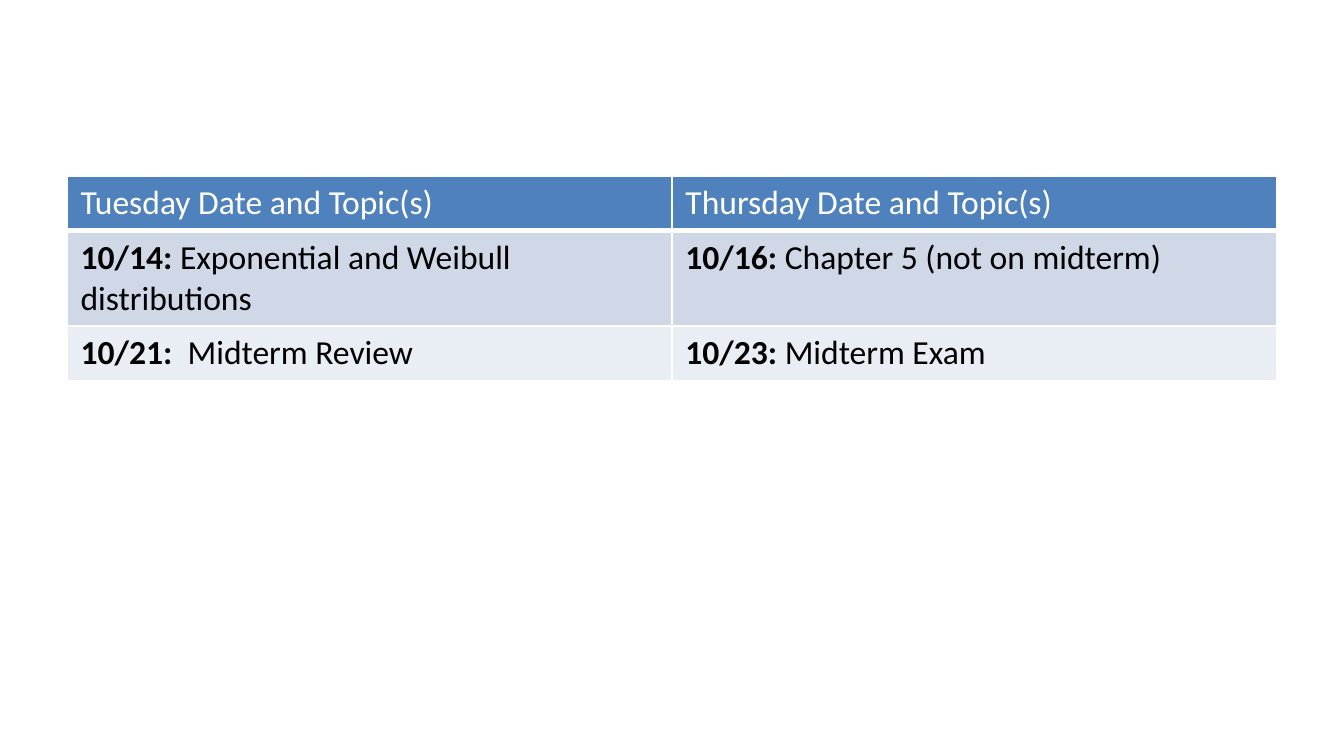
import pptx
import pptx.util
import pptx.oxml
import pptx.dml.color
from pptx.util import Inches

RGB = pptx.dml.color.RGBColor
WHITE = RGB(0xFF, 0xFF, 0xFF)
BLACK = RGB(0, 0, 0)
BLUE = RGB(0x4F, 0x81, 0xBD)
BANDS = [RGB(0xD0, 0xD8, 0xE8), RGB(0xE9, 0xED, 0xF4)]
FONT = "Calibri"

HEADS = ["Tuesday Date and Topic(s)", "Thursday Date and Topic(s)"]
WEEKS = [
    [("10/14:", " Exponential and Weibull distributions"),
     ("10/16:", " Chapter 5 (not on midterm)")],
    [("10/21: ", " Midterm Review"), ("10/23:", " Midterm Exam")],
]
LEFT, TOP, WIDTH = 0.5, 1.31, 9
HEIGHTS = [0.4, 0.71, 0.4]
EDGES = {"L": 1, "R": 1, "T": 1, "B": 3}


def add_text(para, text, size=18, color=BLACK, bold=False):
    run = para.add_run()
    run.text = text
    font = run.font
    font.name, font.size, font.bold = FONT, pptx.util.Pt(size), bold
    font.color.rgb = color


def add_edges(cell):
    props = cell._tc.get_or_add_tcPr()
    for side, width in EDGES.items():
        props.append(pptx.oxml.parse_xml(
            f'<a:ln{side} xmlns:a="http://schemas.openxmlformats.org/'
            f'drawingml/2006/main" w="{pptx.util.Pt(width)}"><a:solidFill>'
            f'<a:srgbClr val="{WHITE}"/></a:solidFill></a:ln{side}>'))


def fill_cell(cell, color):
    cell.fill.solid()
    cell.fill.fore_color.rgb = color


def main():
    deck = pptx.Presentation()
    deck.slide_width = Inches(10)
    deck.slide_height = deck.slide_width * 9 // 16
    slide = deck.slides.add_slide(deck.slide_layouts[6])
    table = slide.shapes.add_table(
        len(HEIGHTS), len(HEADS), Inches(LEFT), Inches(TOP),
        Inches(WIDTH), Inches(sum(HEIGHTS))).table
    for row, height in zip(table.rows, HEIGHTS):
        row.height = Inches(height)

    for col, head in enumerate(HEADS):
        cell = table.cell(0, col)
        add_edges(cell)
        fill_cell(cell, BLUE)
        add_text(cell.text_frame.paragraphs[0], head, color=WHITE)

    for row, (week, band) in enumerate(zip(WEEKS, BANDS), 1):
        for col, (date, topic) in enumerate(week):
            cell = table.cell(row, col)
            fill_cell(cell, band)
            para = cell.text_frame.paragraphs[0]
            add_text(para, date, bold=True)
            add_text(para, topic)

    deck.save("out.pptx")


if __name__ == "__main__":
    main()
